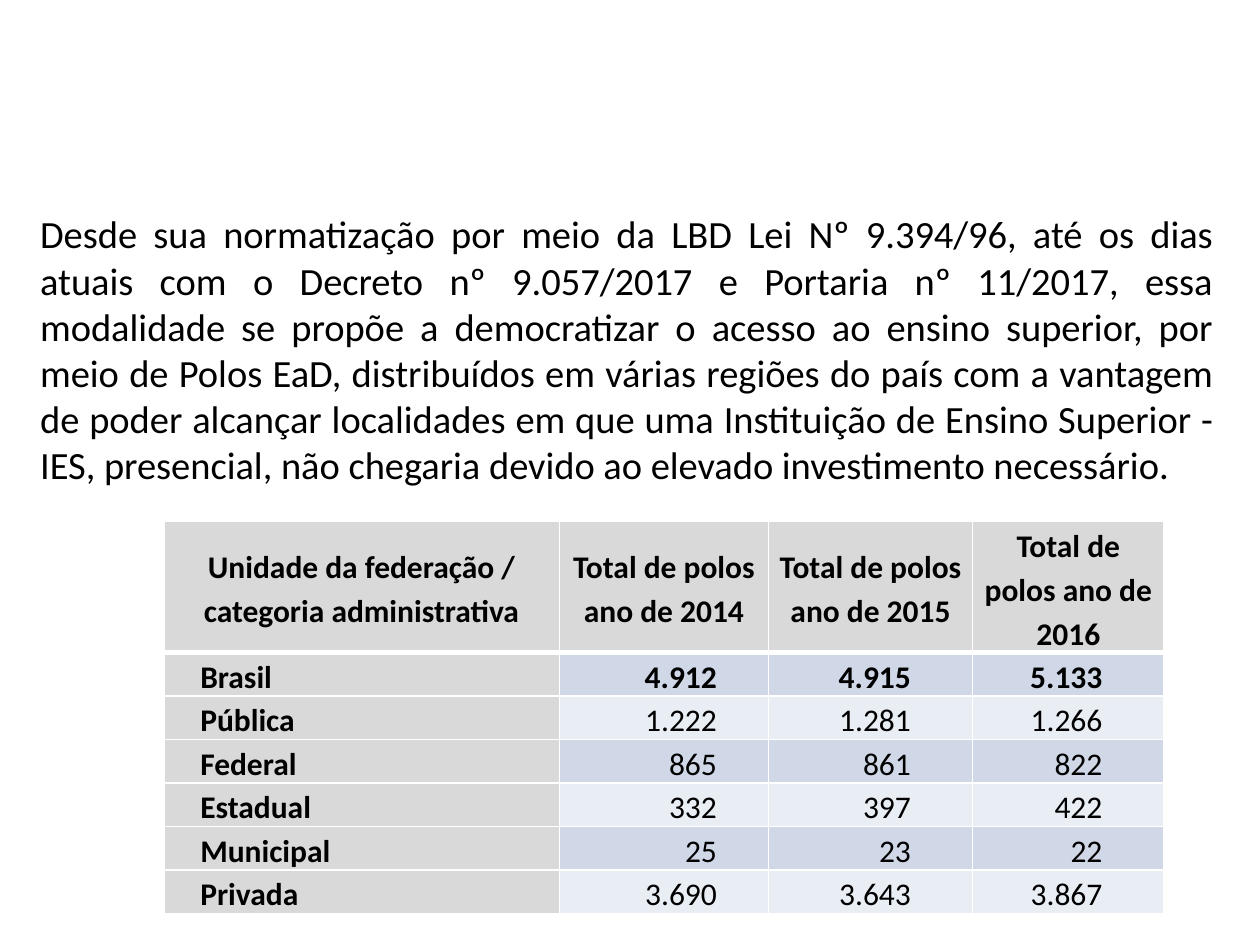
import pptx
import pptx.dml.color
import pptx.enum.text
import pptx.oxml
import pptx.oxml.ns
import pptx.util

WIDTH, HEIGHT = 10, 7.5
ALIGN = pptx.enum.text.PP_ALIGN
INTRO = (
    "Desde sua normatização por meio da LBD Lei Nº 9.394/96, até os dias atuais "
    "com o Decreto nº 9.057/2017 e Portaria nº 11/2017, essa modalidade se propõe "
    "a democratizar o acesso ao ensino superior, por meio de Polos EaD, "
    "distribuídos em várias regiões do país com a vantagem de poder alcançar "
    "localidades em que uma Instituição de Ensino Superior - IES, presencial, não "
    "chegaria devido ao elevado investimento necessário."
)
HEADERS = ["Unidade da federação / categoria administrativa"] + [
    f"Total de polos ano de {year}" for year in (2014, 2015, 2016)
]
CENTRES = [
    ("Brasil", "4.912", "4.915", "5.133"),
    ("Pública", "1.222", "1.281", "1.266"),
    ("Federal", "865", "861", "822"),
    ("Estadual", "332", "397", "422"),
    ("Municipal", "25", "23", "22"),
    ("Privada", "3.690", "3.643", "3.867"),
]
COLUMN_WIDTHS = (3.14, 1.66, 1.62, 1.52)
HEADER_HEIGHT, ROW_HEIGHT = 1.04, 0.31
LEFT_MARGINS = (0.29, 0.07, 0.07, 0.07)
RIGHT_MARGINS = (0.07, 0.41, 0.49, 0.49)
GREY, BANDS = "D9D9D9", ("D0D8E8", "E9EDF4")


def colour(value):
    """Turn a hex string into a colour."""
    return pptx.dml.color.RGBColor.from_string(value)


def write(frame, text, size, align, bold=False, spacing=None):
    """Write one run into the first paragraph of a text frame."""
    para = frame.paragraphs[0]
    para.alignment = align
    para.line_spacing = spacing
    span = para.add_run()
    span.text = text
    span.font.name = "Calibri"
    span.font.size = pptx.util.Pt(size)
    span.font.bold = bold
    span.font.color.rgb = colour("000000")


def set_borders(cell, bottom=1):
    """Draw white borders around a cell."""
    properties = cell._tc.get_or_add_tcPr()
    namespace = pptx.oxml.ns.nsdecls("a")
    widths = {"lnL": 1, "lnR": 1, "lnT": 1, "lnB": bottom}
    for place, (side, points) in enumerate(widths.items()):
        line = pptx.oxml.parse_xml(
            f'<a:{side} {namespace} w="{pptx.util.Pt(points)}"><a:solidFill>'
            f'<a:srgbClr val="FFFFFF"/></a:solidFill></a:{side}>'
        )
        properties.insert(place, line)


def fill_cell(cell, text, fill, align, bold, left=0.07, right=0.07, bottom=1):
    """Style one table cell and write its text."""
    cell.margin_left, cell.margin_right = map(pptx.util.Inches, (left, right))
    cell.margin_top = cell.margin_bottom = 0
    cell.vertical_anchor = pptx.enum.text.MSO_ANCHOR.MIDDLE
    cell.fill.solid()
    cell.fill.fore_color.rgb = colour(fill)
    set_borders(cell, bottom)
    write(cell.text_frame, text, 18, align, bold, 1.15)


def add_intro(page, box):
    """Place the justified opening paragraph."""
    frame = page.shapes.add_textbox(*map(pptx.util.Inches, box)).text_frame
    frame.word_wrap = True
    frame.auto_size = pptx.enum.text.MSO_AUTO_SIZE.SHAPE_TO_FIT_TEXT
    write(frame, INTRO, 22, ALIGN.JUSTIFY)


def add_centres_table(page, box):
    """Place the table of study centres by category and year."""
    table = page.shapes.add_table(
        len(CENTRES) + 1, len(HEADERS), *map(pptx.util.Inches, box)
    ).table
    for column, width in zip(table.columns, COLUMN_WIDTHS):
        column.width = pptx.util.Inches(width)
    for index, row in enumerate(table.rows):
        row.height = pptx.util.Inches(ROW_HEIGHT if index else HEADER_HEIGHT)
    for column, text in enumerate(HEADERS):
        fill_cell(table.cell(0, column), text, GREY, ALIGN.CENTER, True, bottom=3)
    for row, values in enumerate(CENTRES):
        for column, text in enumerate(values):
            fill_cell(
                table.cell(row + 1, column),
                text,
                BANDS[row % 2] if column else GREY,
                ALIGN.RIGHT if column else ALIGN.LEFT,
                row == 0 or column == 0,
                LEFT_MARGINS[column],
                RIGHT_MARGINS[column],
            )


def main():
    """Build the slide and save it."""
    deck = pptx.Presentation()
    deck.slide_width = pptx.util.Inches(WIDTH)
    deck.slide_height = pptx.util.Inches(HEIGHT)
    page = deck.slides.add_slide(deck.slide_layouts[6])
    add_intro(page, (0.22, 1.62, 9.51, 2.32))
    table_height = HEADER_HEIGHT + ROW_HEIGHT * len(CENTRES)
    add_centres_table(page, (1.3, 4.14, sum(COLUMN_WIDTHS), table_height))
    deck.save("out.pptx")


if __name__ == "__main__":
    main()
